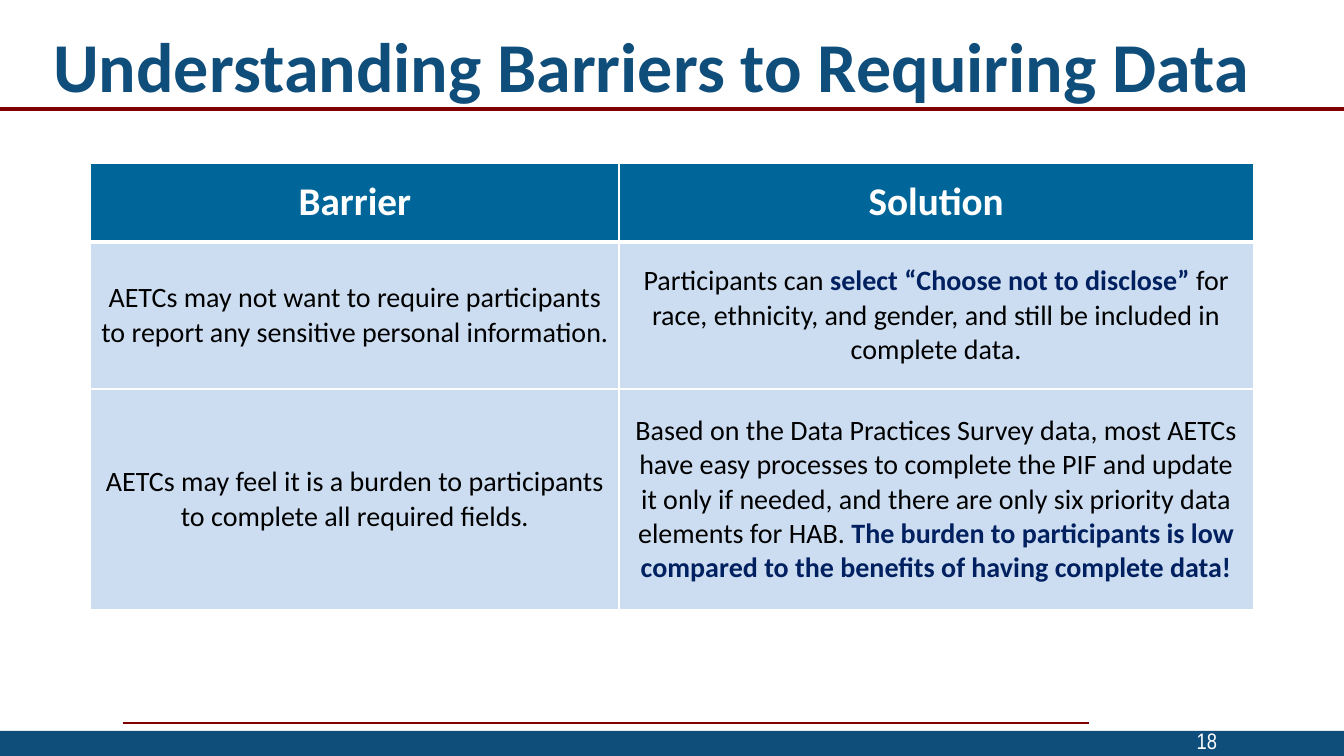
import pptx
import pptx.util
import pptx.dml.color
import pptx.enum.shapes
import pptx.enum.text
import pptx.oxml
import pptx.oxml.ns

WIDTH, HEIGHT = 13.33, 7.5
COLORS = {
    "white": "FFFFFF",
    "black": "000000",
    "maroon": "800000",
    "blue": "0F4D7B",
    "header": "006699",
    "body": "CCDDF1",
    "emphasis": "002060",
}
TITLE = {"name": "Calibri", "size": 50, "bold": True, "color": "blue"}
NUMBER = {"name": "Arial Narrow", "size": 16, "bold": False, "color": "white"}
HEADING = {"name": "Calibri", "size": 28, "bold": True, "color": "white"}
PLAIN = {"name": "Calibri", "size": 20, "bold": False, "color": "black"}
STRONG = {**PLAIN, "bold": True, "color": "emphasis"}

COLUMNS = [5.24, 6.29]
ROWS = [0.78, 1.46, 2.19]
CELLS = [
    [[("Barrier", HEADING)], [("Solution", HEADING)]],
    [
        [("AETCs may not want to require participants to report any "
          "sensitive personal information.", PLAIN)],
        [("Participants can ", PLAIN),
         ("select “Choose not to disclose” ", STRONG),
         ("for race, ethnicity, and gender, and still be included in "
          "complete data.", PLAIN)],
    ],
    [
        [("AETCs may feel it is a burden to participants to complete all "
          "required fields.", PLAIN)],
        [("Based on the Data Practices Survey data, most AETCs have easy "
          "processes to complete the PIF and update it only if needed, and "
          "there are only six priority data elements for HAB. ", PLAIN),
         ("The burden to participants is low compared to the benefits of "
          "having complete data!", STRONG)],
    ],
]


def rgb(name):
    return pptx.dml.color.RGBColor.from_string(COLORS[name])


def inches(*lengths):
    return [pptx.util.Inches(length) for length in lengths]


def write(para, spans, align):
    para.alignment = align
    for text, style in spans:
        span = para.add_run()
        span.text = text
        values = {**style, "size": pptx.util.Pt(style["size"])}
        span.font.color.rgb = rgb(values.pop("color"))
        for key, value in values.items():
            setattr(span.font, key, value)


def add_text(slide, box, spans, align, line_spacing=1.0):
    frame = slide.shapes.add_textbox(*inches(*box)).text_frame
    frame.word_wrap = True
    frame.vertical_anchor = pptx.enum.text.MSO_ANCHOR.MIDDLE
    write(frame.paragraphs[0], spans, align)
    frame.paragraphs[0].line_spacing = line_spacing


def add_rule(slide, left, right, top, weight):
    rule = slide.shapes.add_connector(
        pptx.enum.shapes.MSO_CONNECTOR.STRAIGHT, *inches(left, top, right, top))
    rule.line.color.rgb = rgb("maroon")
    rule.line.width = pptx.util.Pt(weight)
    properties = rule._element.spPr
    properties.append(pptx.oxml.parse_xml(
        f'<a:effectLst {pptx.oxml.ns.nsdecls("a")}/>'))


def add_borders(cell, weights):
    """Draw white cell edges; weights maps L, R, T, B, in that order, to points."""
    properties = cell._tc.get_or_add_tcPr()
    for index, (side, weight) in enumerate(weights.items()):
        properties.insert(index, pptx.oxml.parse_xml(
            f'<a:ln{side} {pptx.oxml.ns.nsdecls("a")} w="{pptx.util.Pt(weight)}">'
            f'<a:solidFill><a:srgbClr val="{COLORS["white"]}"/></a:solidFill>'
            f'</a:ln{side}>'))


def add_header(slide, box):
    left, top, width, height = box
    add_rule(slide, left, left + width, top + height, 3)
    add_text(slide, (left + 0.43, top - 0.03, 12.68, 1.45),
             [("Understanding Barriers to Requiring Data", TITLE)],
             pptx.enum.text.PP_ALIGN.LEFT, 0.9)


def add_footer(slide, box):
    left, top, width, height = box
    add_rule(slide, left + 1.22, left + 10.8, top - 0.08, 1.5)
    band = slide.shapes.add_shape(
        pptx.enum.shapes.MSO_SHAPE.RECTANGLE, *inches(*box))
    band.shadow.inherit = False
    band.fill.solid()
    band.fill.fore_color.rgb = rgb("blue")
    band.line.fill.background()
    add_text(slide, (left + 9.17, top - 0.1, 3, 0.4), [("18", NUMBER)],
             pptx.enum.text.PP_ALIGN.RIGHT)


def add_barrier_table(slide, left, top):
    table = slide.shapes.add_table(
        len(ROWS), len(COLUMNS),
        *inches(left, top, sum(COLUMNS), sum(ROWS))).table
    for column, width in zip(table.columns, COLUMNS):
        column.width = pptx.util.Inches(width)
    for row_index, (row, height) in enumerate(zip(table.rows, ROWS)):
        row.height = pptx.util.Inches(height)
        for cell, spans in zip(row.cells, CELLS[row_index]):
            cell.fill.solid()
            cell.fill.fore_color.rgb = rgb("body" if row_index else "header")
            cell.vertical_anchor = pptx.enum.text.MSO_ANCHOR.MIDDLE
            add_borders(cell, {"L": 1, "R": 1,
                               "T": 3 if row_index == 1 else 1,
                               "B": 1 if row_index else 3})
            write(cell.text_frame.paragraphs[0], spans,
                  pptx.enum.text.PP_ALIGN.CENTER)


def main():
    deck = pptx.Presentation()
    deck.slide_width, deck.slide_height = inches(WIDTH, HEIGHT)
    slide = deck.slides.add_slide(deck.slide_layouts[6])
    add_footer(slide, (0, HEIGHT - 0.25, WIDTH, 0.25))
    add_header(slide, (0, 0, WIDTH, 1.08))
    add_barrier_table(slide, (WIDTH - sum(COLUMNS)) / 2, 1.62)
    deck.save("out.pptx")


if __name__ == "__main__":
    main()
